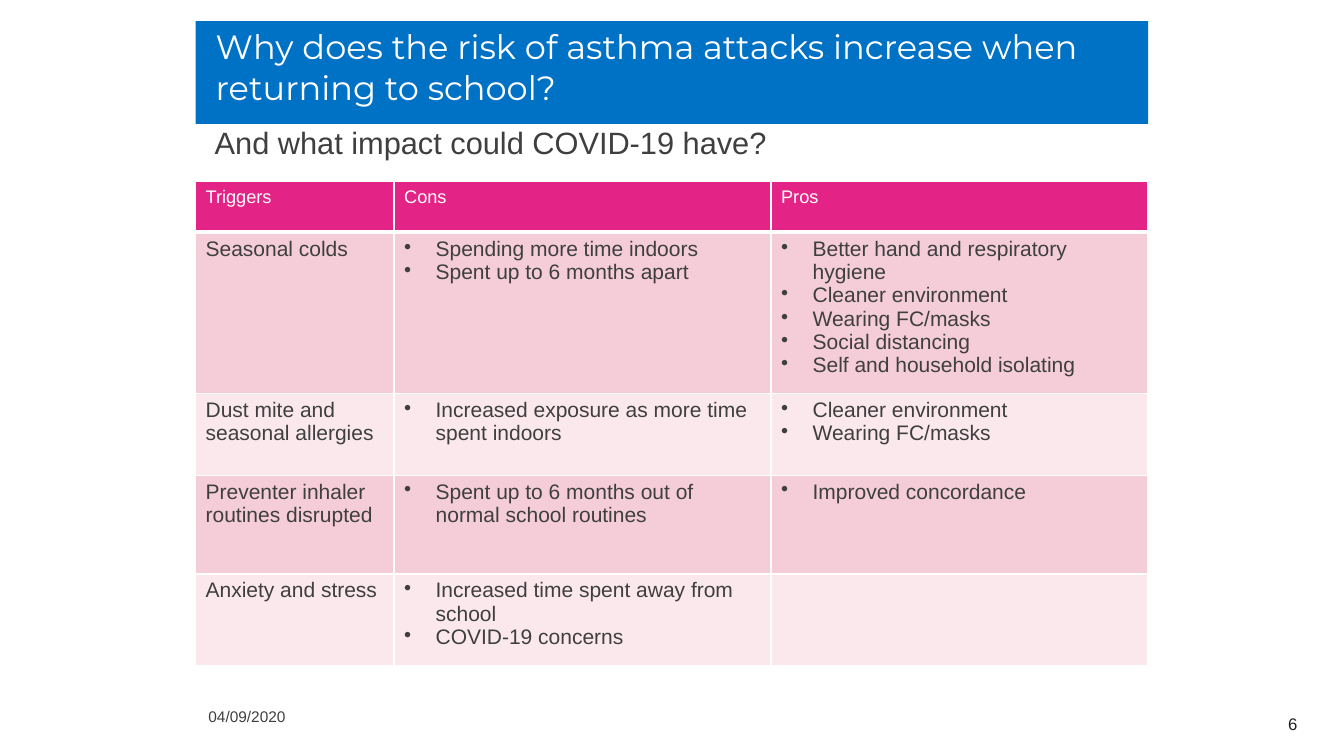
import pptx
import pptx.util
import pptx.dml.color
import pptx.enum.text
import pptx.oxml
import pptx.oxml.ns

Pt = pptx.util.Pt
RGBColor = pptx.dml.color.RGBColor
MSO_ANCHOR = pptx.enum.text.MSO_ANCHOR
PP_ALIGN = pptx.enum.text.PP_ALIGN

BLUE = RGBColor(0x00, 0x72, 0xC6)
PINK = RGBColor(0xE3, 0x24, 0x86)
ROSE = RGBColor(0xF4, 0xCD, 0xD9)
BLUSH = RGBColor(0xFA, 0xE8, 0xED)
WHITE = RGBColor(0xFF, 0xFF, 0xFF)
GREY = RGBColor(0x3F, 0x3F, 0x3F)
BLACK = RGBColor(0x20, 0x20, 0x20)

LEFT, WIDTH = 139.7, 680.4
COLUMN_WIDTHS = [141.8, 269.3, 269.3]
ROW_HEIGHTS = [36, 115.2, 58.3, 70.6, 65.5]
BULLET_INDENT = 22.5
ROWS = [
    ("Triggers", ["Cons"], ["Pros"]),
    ("Seasonal colds",
     ["Spending more time indoors", "Spent up to 6 months apart"],
     ["Better hand and respiratory hygiene", "Cleaner environment", "Wearing FC/masks",
      "Social distancing", "Self and household isolating"]),
    ("Dust mite and seasonal allergies",
     ["Increased exposure as more time spent indoors"],
     ["Cleaner environment", "Wearing FC/masks"]),
    ("Preventer inhaler routines disrupted",
     ["Spent up to 6 months out of normal school routines"],
     ["Improved concordance"]),
    ("Anxiety and stress",
     ["Increased time spent away from school", "COVID-19 concerns"],
     []),
]


def format_text(text_frame, size, color, font_name="Arial"):
    for paragraph in text_frame.paragraphs:
        for run in paragraph.runs:
            run.font.size = Pt(size)
            run.font.name = font_name
            run.font.bold = False
            run.font.color.rgb = color


def set_indent(paragraph, margin, first_line, bullet=None):
    properties = paragraph._p.get_or_add_pPr()
    properties.set("marL", str(Pt(margin)))
    properties.set("indent", str(Pt(first_line)))
    tag = f'buChar char="{bullet}"' if bullet else "buNone"
    properties.append(pptx.oxml.parse_xml(f"<a:{tag} {pptx.oxml.ns.nsdecls('a')}/>"))


presentation = pptx.Presentation()
presentation.slide_width, presentation.slide_height = Pt(960), Pt(540)
slide = presentation.slides.add_slide(presentation.slide_layouts[1])

# Title banner and subtitle
title, subtitle = slide.shapes.title, slide.placeholders[1]
for shape, top, height, indent, text, size, font_name, color in [
    (title, 15.1, 73.4, 7.2,
     "Why does the risk of asthma attacks increase when returning to school?",
     24, "Montserrat", WHITE),
    (subtitle, 88.6, 33.8, 13.7, "And what impact could COVID-19 have?", 22, "Arial", GREY),
]:
    shape.left, shape.top, shape.width, shape.height = Pt(LEFT), Pt(top), Pt(WIDTH), Pt(height)
    text_frame = shape.text_frame
    text_frame.text = text
    text_frame.auto_size = pptx.enum.text.MSO_AUTO_SIZE.NONE
    text_frame.vertical_anchor = MSO_ANCHOR.TOP
    paragraph = text_frame.paragraphs[0]
    paragraph.alignment = PP_ALIGN.LEFT
    paragraph.space_before = Pt(0)
    set_indent(paragraph, indent, 0)
    format_text(text_frame, size, color, font_name)
title.fill.solid()
title.fill.fore_color.rgb = BLUE
subtitle.text_frame.margin_left = subtitle.text_frame.margin_right = 0
subtitle.text_frame.margin_top = subtitle.text_frame.margin_bottom = 0

# Table of triggers
table = slide.shapes.add_table(len(ROWS), len(COLUMN_WIDTHS), Pt(LEFT), Pt(129.9),
                               Pt(WIDTH), Pt(sum(ROW_HEIGHTS))).table
for column, width in zip(table.columns, COLUMN_WIDTHS):
    column.width = Pt(width)
for row_index, (trigger, cons, pros) in enumerate(ROWS):
    table.rows[row_index].height = Pt(ROW_HEIGHTS[row_index])
    is_header = row_index == 0
    for column_index, lines in enumerate([[trigger], cons, pros]):
        cell = table.cell(row_index, column_index)
        cell.fill.solid()
        cell.fill.fore_color.rgb = PINK if is_header else ROSE if row_index % 2 else BLUSH
        cell.text_frame.text = "\n".join(lines)
        format_text(cell.text_frame, 13 if is_header else 15, WHITE if is_header else GREY)
        if lines and column_index and not is_header:
            for paragraph in cell.text_frame.paragraphs:
                set_indent(paragraph, BULLET_INDENT, -BULLET_INDENT, "•")
        # Cell borders come before the fill
        for position, side in enumerate("LRTB"):
            line_width = Pt(3 if is_header and side == "B" else 1)
            cell._tc.get_or_add_tcPr().insert(position, pptx.oxml.parse_xml(
                f'<a:ln{side} {pptx.oxml.ns.nsdecls("a")} w="{line_width}"><a:solidFill>'
                f'<a:srgbClr val="{WHITE}"/></a:solidFill></a:ln{side}>'))

# Slide number and date
for left, top, width, height, text, size, color, alignment, anchor in [
    (709.9, 502.6, 223.9, 28.8, "6", 12, BLACK, PP_ALIGN.RIGHT, MSO_ANCHOR.MIDDLE),
    (141.8, 501.8, 153.4, 20.9, "04/09/2020", 11, GREY, PP_ALIGN.LEFT, MSO_ANCHOR.TOP),
]:
    text_frame = slide.shapes.add_textbox(Pt(left), Pt(top), Pt(width), Pt(height)).text_frame
    text_frame.word_wrap = True
    text_frame.vertical_anchor = anchor
    text_frame.text = text
    text_frame.paragraphs[0].alignment = alignment
    format_text(text_frame, size, color)

presentation.save("out.pptx")
